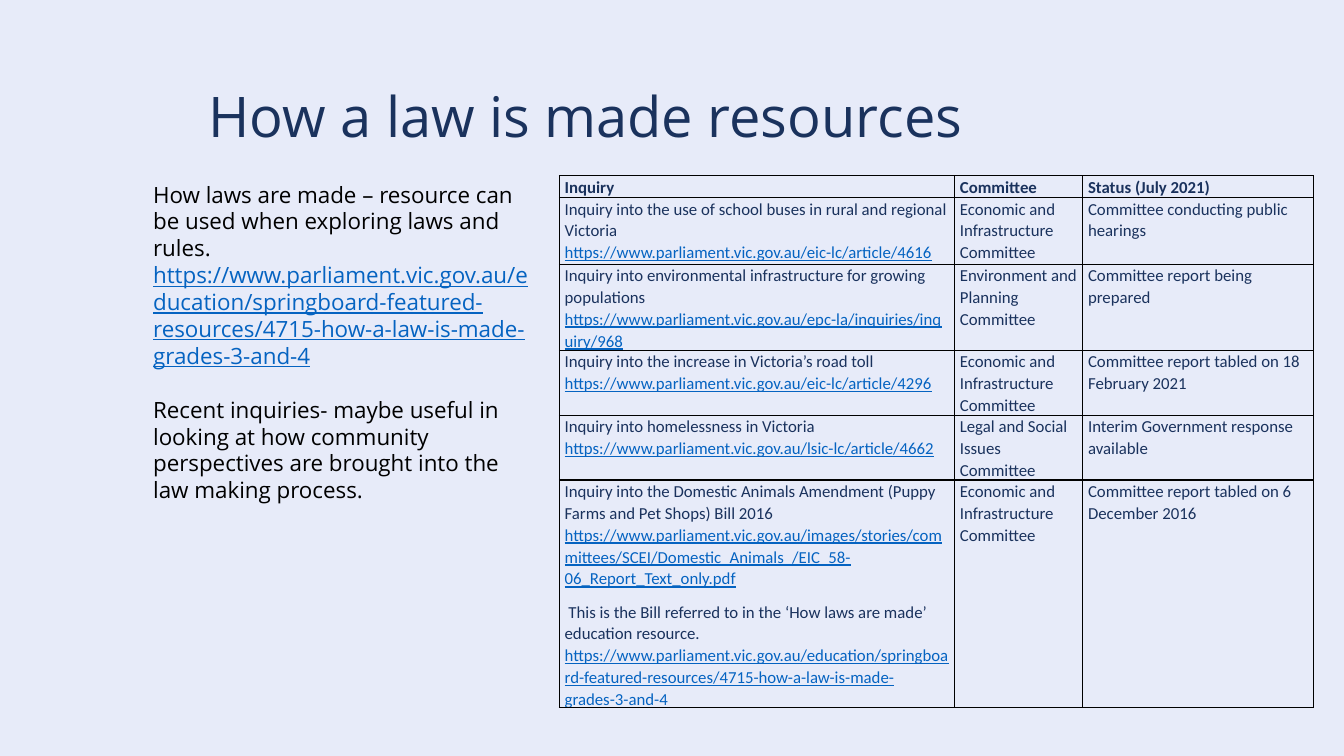
from lxml.etree import SubElement
from pptx import Presentation
from pptx.dml.color import RGBColor
from pptx.enum.text import MSO_ANCHOR, MSO_AUTO_SIZE, PP_ALIGN
from pptx.oxml.ns import qn
from pptx.util import Cm, Pt

NAVY, BLACK, LINK, BACKGROUND = "1A325D", "000000", "0563C1", "E7EBF9"
SITE = "https://www.parliament.vic.gov.au/"
LAW_RESOURCE = SITE + "education/springboard-featured-resources/4715-how-a-law-is-made-grades-3-and-4"
ECONOMIC = "Economic and Infrastructure Committee"

TITLE_FONT = {"name": "Open Sans", "size": Pt(40), "bold": False}
BODY_FONT = {"name": "Open Sans", "size": Pt(16)}
CELL_FONT = {"name": "Calibri", "size": Pt(12), "bold": False}
HEADER_FONT = {**CELL_FONT, "bold": True}
CELL_PARAGRAPH = {"line_spacing": 1.07, "space_after": Pt(8), "alignment": PP_ALIGN.LEFT}
CELL_MARGINS = {"margin_left": Cm(0.13), "margin_right": Cm(0.13), "margin_top": 0, "margin_bottom": 0}

BODY = [
    ["How laws are made – resource can be used when exploring laws and rules. ", LAW_RESOURCE],
    ["Recent inquiries- maybe useful in looking at how community perspectives are brought into the law making process."],
]

COLUMN_WIDTHS = [9.96, 3.23, 5.82]
ROW_HEIGHTS = [0.55, 1.68, 2.17, 1.63, 1.63, 5.74]
HEADINGS = ["Inquiry", "Committee", "Status (July 2021)"]
INQUIRIES = [
    ([["Inquiry into the use of school buses in rural and regional Victoria ",
       SITE + "eic-lc/article/4616"]],
     ECONOMIC, "Committee conducting public hearings"),
    ([["Inquiry into environmental infrastructure for growing populations ",
       SITE + "epc-la/inquiries/inquiry/968"]],
     "Environment and Planning Committee", "Committee report being prepared"),
    ([["Inquiry into the increase in Victoria’s road toll ",
       SITE + "eic-lc/article/4296"]],
     ECONOMIC, "Committee report tabled on 18 February 2021"),
    ([["Inquiry into homelessness in Victoria ",
       SITE + "lsic-lc/article/4662"]],
     "Legal and Social Issues Committee", "Interim Government response available"),
    ([["Inquiry into the Domestic Animals Amendment (Puppy Farms and Pet Shops) Bill 2016 ",
       SITE + "images/stories/committees/SCEI/Domestic_Animals_/EIC_58-06_Report_Text_only.pdf"],
      [" This is the Bill referred to in the ‘How laws are made’ education resource. ",
       LAW_RESOURCE]],
     ECONOMIC, "Committee report tabled on 6 December 2016"),
]


def color(value):
    return RGBColor.from_string(value)


def apply_format(target, values):
    for name, value in values.items():
        setattr(target, name, value)


def write_paragraphs(text_frame, paragraphs, font, text_color, paragraph_format):
    for index, pieces in enumerate(paragraphs):
        paragraph = text_frame.add_paragraph() if index else text_frame.paragraphs[0]
        apply_format(paragraph, paragraph_format)
        for piece in pieces:
            is_link = piece.startswith(SITE)
            run = paragraph.add_run()
            run.text = piece
            apply_format(run.font, font)
            run.font.underline = is_link
            run.font.color.rgb = color(LINK if is_link else text_color)


def add_title(slide, text):
    title = slide.shapes.title
    apply_format(title, {"left": Cm(5), "top": Cm(2.13), "width": Cm(25.25), "height": Cm(3.23)})
    apply_format(title.text_frame, {"word_wrap": True, "auto_size": MSO_AUTO_SIZE.NONE,
                                    "vertical_anchor": MSO_ANCHOR.TOP})
    write_paragraphs(title.text_frame, [[text]], TITLE_FONT, NAVY,
                     {"line_spacing": 0.9, "alignment": PP_ALIGN.LEFT})


def add_body(slide, paragraphs):
    box = slide.shapes.add_textbox(Cm(3.61), Cm(4.43), Cm(10.19), Cm(8.5))
    box.text_frame.word_wrap = True
    write_paragraphs(box.text_frame, paragraphs, BODY_FONT, BLACK, {"alignment": PP_ALIGN.LEFT})
    for paragraph in box.text_frame.paragraphs[1:]:
        paragraph.space_before = Pt(19.3)


def add_borders(cell):
    properties = cell._tc.get_or_add_tcPr()
    for index, side in enumerate(["lnL", "lnR", "lnT", "lnB"]):
        line = SubElement(properties, qn(f"a:{side}"), w=str(Pt(1)))
        fill = SubElement(line, qn("a:solidFill"))
        SubElement(fill, qn("a:srgbClr"), val=BLACK)
        properties.insert(index, line)


def fill_cell(cell, paragraphs, font):
    apply_format(cell, CELL_MARGINS)
    cell.vertical_anchor = MSO_ANCHOR.TOP
    cell.fill.background()
    add_borders(cell)
    write_paragraphs(cell.text_frame, paragraphs, font, NAVY, CELL_PARAGRAPH)


def add_inquiry_table(slide):
    frame = slide.shapes.add_table(len(ROW_HEIGHTS), len(COLUMN_WIDTHS), Cm(14.1), Cm(4.43),
                                   Cm(sum(COLUMN_WIDTHS)), Cm(sum(ROW_HEIGHTS)))
    table = frame.table
    apply_format(table, {"first_row": False, "horz_banding": False})
    for column, width in zip(table.columns, COLUMN_WIDTHS):
        column.width = Cm(width)
    for row, height in zip(table.rows, ROW_HEIGHTS):
        row.height = Cm(height)
    for cell, heading in zip(table.rows[0].cells, HEADINGS):
        fill_cell(cell, [[heading]], HEADER_FONT)
    for row_index, (inquiry, committee, status) in enumerate(INQUIRIES, 1):
        contents = [inquiry, [[committee]], [[status]]]
        for cell, paragraphs in zip(table.rows[row_index].cells, contents):
            fill_cell(cell, paragraphs, CELL_FONT)


def main():
    presentation = Presentation()
    apply_format(presentation, {"slide_width": Cm(33.87), "slide_height": Cm(19.05)})
    slide = presentation.slides.add_slide(presentation.slide_layouts.get_by_name("Title Only"))
    slide.background.fill.solid()
    slide.background.fill.fore_color.rgb = color(BACKGROUND)
    add_title(slide, "How a law is made resources")
    add_body(slide, BODY)
    add_inquiry_table(slide)
    presentation.save("out.pptx")


if __name__ == "__main__":
    main()
